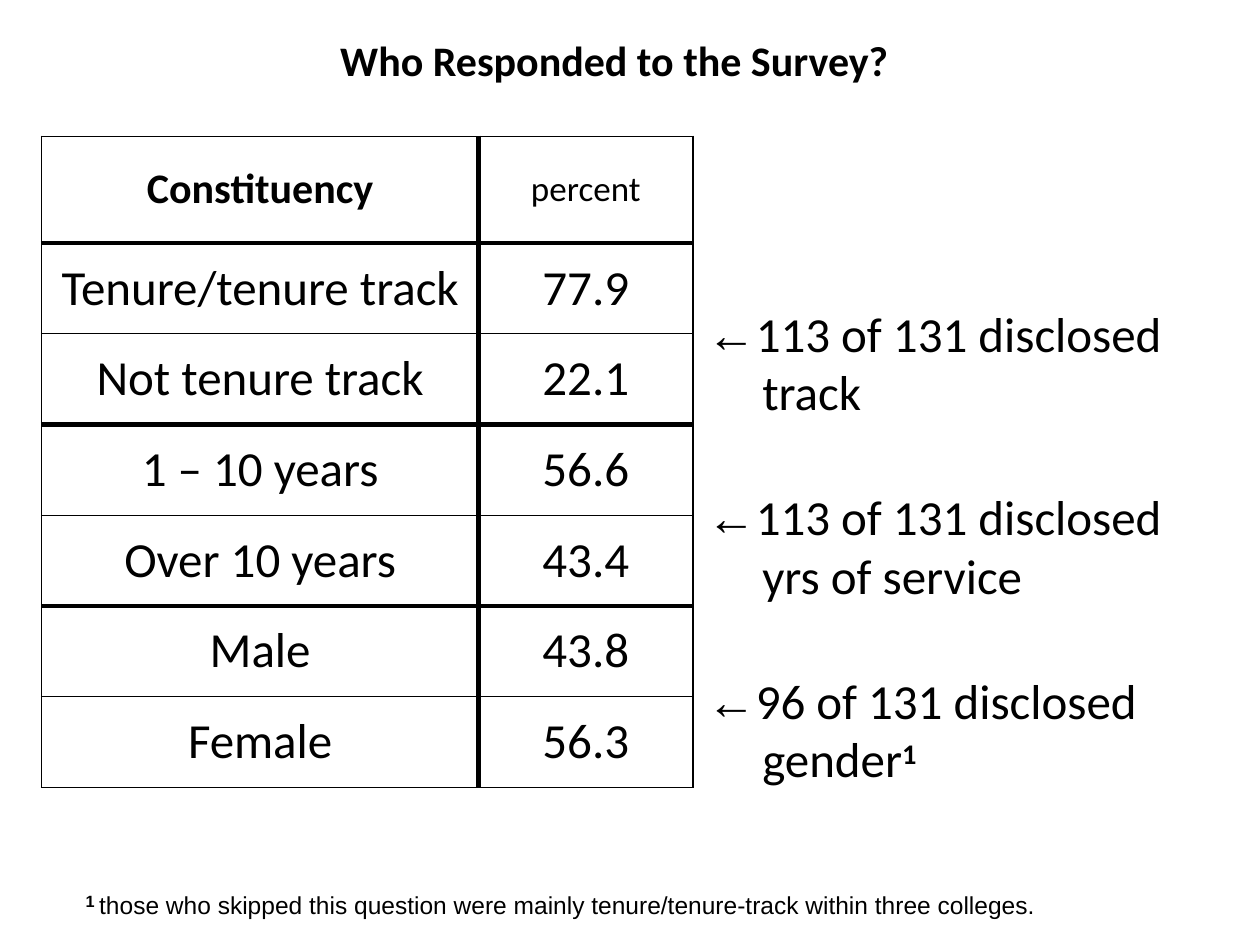
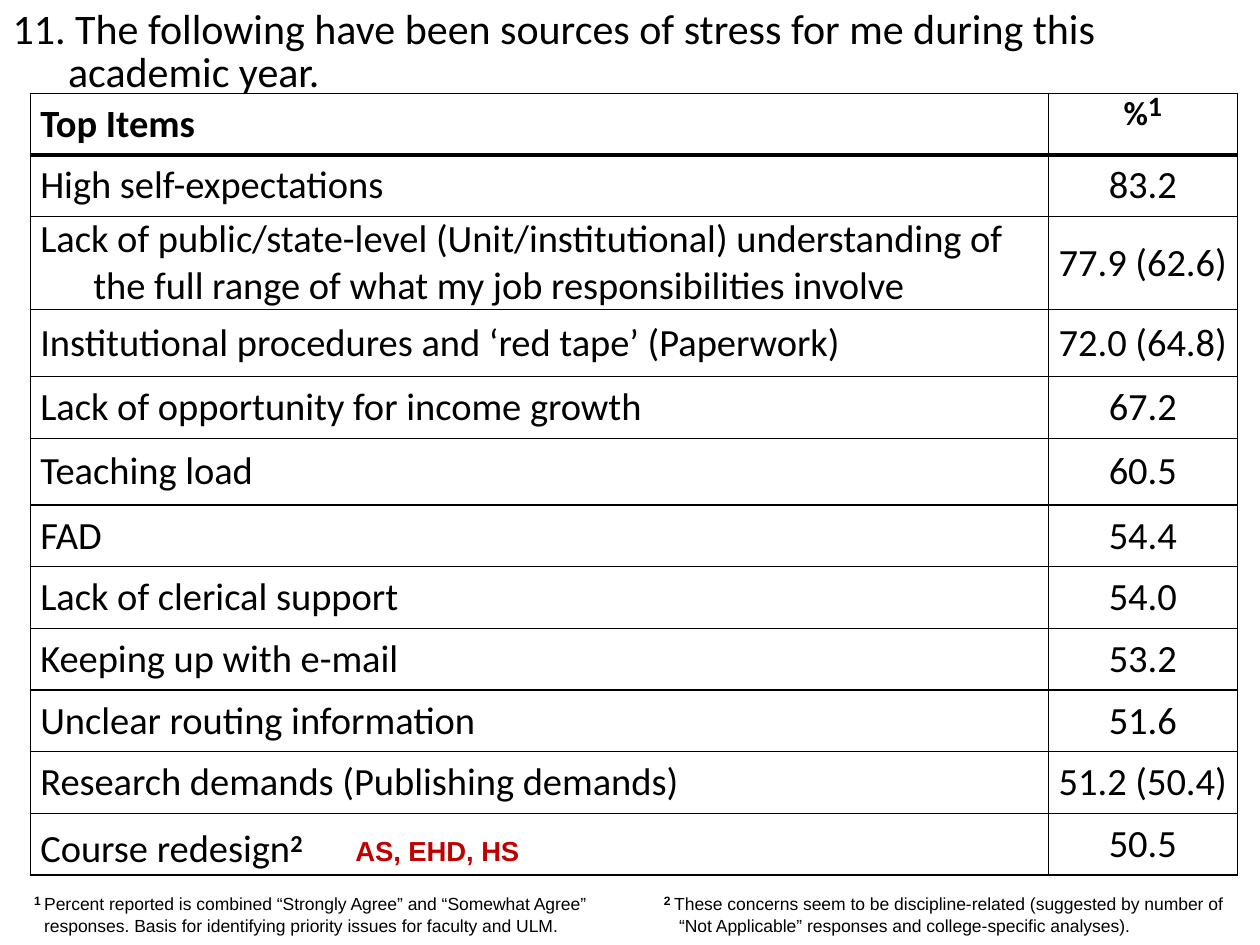
from dataclasses import dataclass

from lxml.etree import SubElement
from pptx import Presentation
from pptx.dml.color import RGBColor
from pptx.enum.text import MSO_ANCHOR, MSO_AUTO_SIZE, PP_ALIGN
from pptx.oxml.ns import qn
from pptx.util import Emu, Inches, Pt

BLACK = RGBColor(0x00, 0x00, 0x00)
RED = RGBColor(0xC0, 0x00, 0x00)
HEADING_FONT = "Calibri"
NOTE_FONT = "Arial"
SLIDE_WIDTH, SLIDE_HEIGHT = Inches(10), Inches(7.5)
HEAVY, MEDIUM, THIN = 3, 1, 0.75

CONSTITUENCIES = [
    ("Tenure/tenure track", "77.9"),
    ("Not tenure track", "22.1"),
    ("1 – 10 years", "56.6"),
    ("Over 10 years", "43.4"),
    ("Male", "43.8"),
    ("Female", "56.3"),
]
STRESS_SOURCES = [
    ("High self-expectations", "83.2"),
    ("Lack of public/state-level (Unit/institutional) understanding "
     "of the full range of what my job responsibilities involve", "77.9 (62.6)"),
    ("Institutional procedures and ‘red tape’ (Paperwork)", "72.0 (64.8)"),
    ("Lack of opportunity for income growth", "67.2"),
    ("Teaching load", "60.5"),
    ("FAD", "54.4"),
    ("Lack of clerical support", "54.0"),
    ("Keeping up with e-mail", "53.2"),
    ("Unclear routing information", "51.6"),
    ("Research demands (Publishing demands)", "51.2 (50.4)"),
]


@dataclass
class Run:
    text: str
    size: float
    bold: bool = False
    font: str = HEADING_FONT
    color: RGBColor = BLACK
    baseline: int = 0


def across(percent):
    """Length as a percentage of the slide's width."""
    return Emu(int(SLIDE_WIDTH * percent / 100))


def down(percent):
    """Length as a percentage of the slide's height."""
    return Emu(int(SLIDE_HEIGHT * percent / 100))


def write(paragraph, runs, align=PP_ALIGN.LEFT, margin=0, indent=0,
          line=None, before=0, tab=None):
    """Fill a paragraph with runs; margin, indent and tab are in inches."""
    paragraph.alignment = align
    paragraph.space_before = Pt(before)
    if line:
        paragraph.line_spacing = Pt(line)
    properties = paragraph._p.get_or_add_pPr()
    properties.set("marL", str(Inches(margin)))
    properties.set("indent", str(Inches(indent)))
    SubElement(properties, qn("a:buNone"))
    if tab:
        stops = SubElement(properties, qn("a:tabLst"))
        SubElement(stops, qn("a:tab"), pos=str(Inches(tab)), algn="l")
    for spec in runs:
        run = paragraph.add_run()
        run.text = spec.text
        run.font.size = Pt(spec.size)
        run.font.bold = spec.bold
        run.font.name = spec.font
        run.font.color.rgb = spec.color
        if spec.baseline:
            run._r.get_or_add_rPr().set("baseline", str(spec.baseline * 1000))


def settle(shape, left, top, width, height):
    """Place a text shape by slide percentages and return its bare frame."""
    shape.left, shape.top = across(left), down(top)
    shape.width, shape.height = across(width), down(height)
    frame = shape.text_frame
    frame.word_wrap = True
    frame.auto_size = MSO_AUTO_SIZE.NONE
    frame.vertical_anchor = MSO_ANCHOR.TOP
    frame.margin_left = frame.margin_right = frame.margin_bottom = 0
    frame.margin_top = Inches(0.01)
    return frame


def add_title(slide, area, text, bold=False, **layout):
    frame = settle(slide.shapes.title, *area)
    write(frame.paragraphs[0], [Run(text, 24, bold)], **layout)


def add_disclosures(slide, area, disclosures):
    """List of arrowed remarks beside the table."""
    frame = settle(slide.placeholders[1], *area)
    frame.margin_top = Inches(0.03)
    for index, runs in enumerate(disclosures):
        paragraph = frame.add_paragraph() if index else frame.paragraphs[0]
        write(paragraph, [Run("←", 28, font=NOTE_FONT)] + runs, margin=0.46,
              indent=-0.44, line=33.4, before=38 if index else 0)


def add_footnote(slide, area, mark, text, size, mark_size, **layout):
    frame = settle(slide.shapes.add_textbox(0, 0, 0, 0), *area)
    write(frame.paragraphs[0],
          [Run(mark + " ", mark_size, True, NOTE_FONT, baseline=25),
           Run(text, size, font=NOTE_FONT)], **layout)


def rule_cell(cell, widths):
    """Draw left, right, top and bottom borders, widths in points."""
    properties = cell._tc.get_or_add_tcPr()
    for side, width in zip("LRTB", widths):
        border = SubElement(properties, qn(f"a:ln{side}"), w=str(Pt(width)))
        fill = SubElement(border, qn("a:solidFill"))
        SubElement(fill, qn("a:srgbClr"), val=str(BLACK))


def add_ruled_table(slide, left, top, columns, rows, verticals, horizontals):
    """Empty table; verticals and horizontals are its line widths in order."""
    table = slide.shapes.add_table(
        len(rows), len(columns), across(left), down(top),
        across(sum(columns)), down(sum(rows))).table
    table.first_row = table.horz_banding = False
    for column, width in zip(table.columns, columns):
        column.width = across(width)
    for r, height in enumerate(rows):
        table.rows[r].height = down(height)
        for c in range(len(columns)):
            cell = table.cell(r, c)
            cell.margin_left = cell.margin_right = 0
            cell.margin_top = cell.margin_bottom = 0
            cell.vertical_anchor = MSO_ANCHOR.MIDDLE
            rule_cell(cell, verticals[c:c + 2] + horizontals[r:r + 2])
            cell.fill.background()
    return table


def write_cell(cell, runs, **layout):
    write(cell.text_frame.paragraphs[0], runs, **layout)


def build_respondents(slide):
    add_title(slide, (26.9, 3.47, 45, 5.73), "Who Responded to the Survey?",
              bold=True, margin=0.01)
    table = add_ruled_table(
        slide, 3.3, 14.4, [34.7, 17], [11.33] + [9.6] * len(CONSTITUENCIES),
        [MEDIUM, HEAVY, MEDIUM],
        [THIN] + [HEAVY, THIN] * (len(CONSTITUENCIES) // 2) + [THIN])
    headings = [Run("Constituency", 24, True), Run("percent", 20)]
    body = [[Run(text, 28) for text in row] for row in CONSTITUENCIES]
    for r, row in enumerate([headings] + body):
        for c, run in enumerate(row):
            write_cell(table.cell(r, c), [run], align=PP_ALIGN.CENTER)
    add_disclosures(slide, (55.9, 31.73, 36.4, 52), [
        [Run("113 of 131 disclosed track", 28)],
        [Run("113 of 131 disclosed yrs of service", 28)],
        [Run("96 of 131 disclosed gender", 28), Run("1", 28, True, baseline=26)],
    ])
    add_footnote(slide, (6.4, 93.73, 78, 3.47), "1",
                 "those who skipped this question were mainly "
                 "tenure/tenure-track within three colleges.",
                 14, 16, margin=0.04)


def build_stress_sources(slide):
    add_title(slide, (0.9, 0.95, 86.2, 9.5),
              "11. The following have been sources of stress for me during "
              "this academic year.", margin=0.45, indent=-0.44, line=24.5)
    standard, tall, double = 6.53, 7.07, 9.87
    rows = [standard, standard, double, tall, standard, tall] + [standard] * 6
    table = add_ruled_table(slide, 2.4, 9.87, [80.8, 15], rows, [THIN] * 3,
                            [THIN, HEAVY] + [THIN] * (len(rows) - 1))
    for row in table.rows:
        row.cells[0].margin_left = Inches(0.08)

    write_cell(table.cell(0, 0), [Run("Top Items", 22, True)])
    percent_heading = table.cell(0, 1)
    percent_heading.vertical_anchor = MSO_ANCHOR.TOP
    write_cell(percent_heading,
               [Run("%", 33, True, baseline=-16), Run("1", 16, True)],
               align=PP_ALIGN.CENTER, line=23.4)

    for r, (source, percent) in enumerate(STRESS_SOURCES, start=1):
        hanging = {}
        if rows[r] == double:
            hanging = dict(margin=0.42, indent=-0.42, line=26.4)
        write_cell(table.cell(r, 0), [Run(source, 22)], **hanging)
        write_cell(table.cell(r, 1), [Run(percent, 22)], align=PP_ALIGN.CENTER)

    redesign, redesign_percent = table.rows[len(rows) - 1].cells
    redesign.vertical_anchor = MSO_ANCHOR.TOP
    redesign.margin_top = Inches(0.05)
    write_cell(redesign,
               [Run("Course redesign", 22), Run("2\t", 24, True, baseline=23),
                Run("AS, EHD, HS", 27, True, NOTE_FONT, RED, 2)], tab=6.4)
    write_cell(redesign_percent, [Run("50.5", 22)], align=PP_ALIGN.CENTER)

    add_footnote(slide, (2.3, 94, 44.8, 4.8), "1",
                 "Percent reported is combined “Strongly Agree” and “Somewhat "
                 "Agree” responses. Basis for identifying priority issues for "
                 "faculty and ULM.", 10, 12, margin=0.12, indent=-0.08)
    add_footnote(slide, (52.3, 94, 45.2, 4.8), "2",
                 "These concerns seem to be discipline-related (suggested by "
                 "number of “Not Applicable” responses and college-specific "
                 "analyses).", 10, 12, margin=0.16, indent=-0.12)


def main():
    deck = Presentation()
    deck.slide_width, deck.slide_height = SLIDE_WIDTH, SLIDE_HEIGHT
    title_and_content, title_only = deck.slide_layouts[1], deck.slide_layouts[5]
    build_respondents(deck.slides.add_slide(title_and_content))
    build_stress_sources(deck.slides.add_slide(title_only))
    deck.save("out.pptx")


if __name__ == "__main__":
    main()
